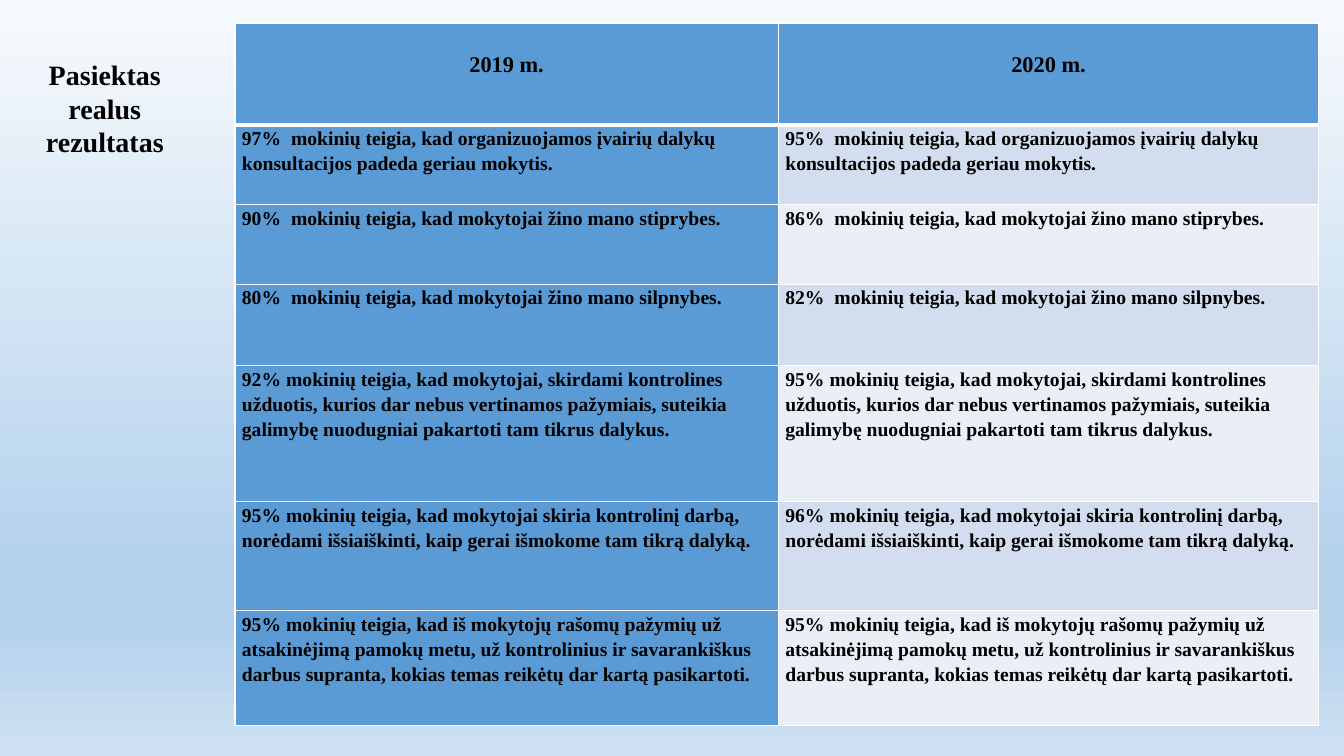
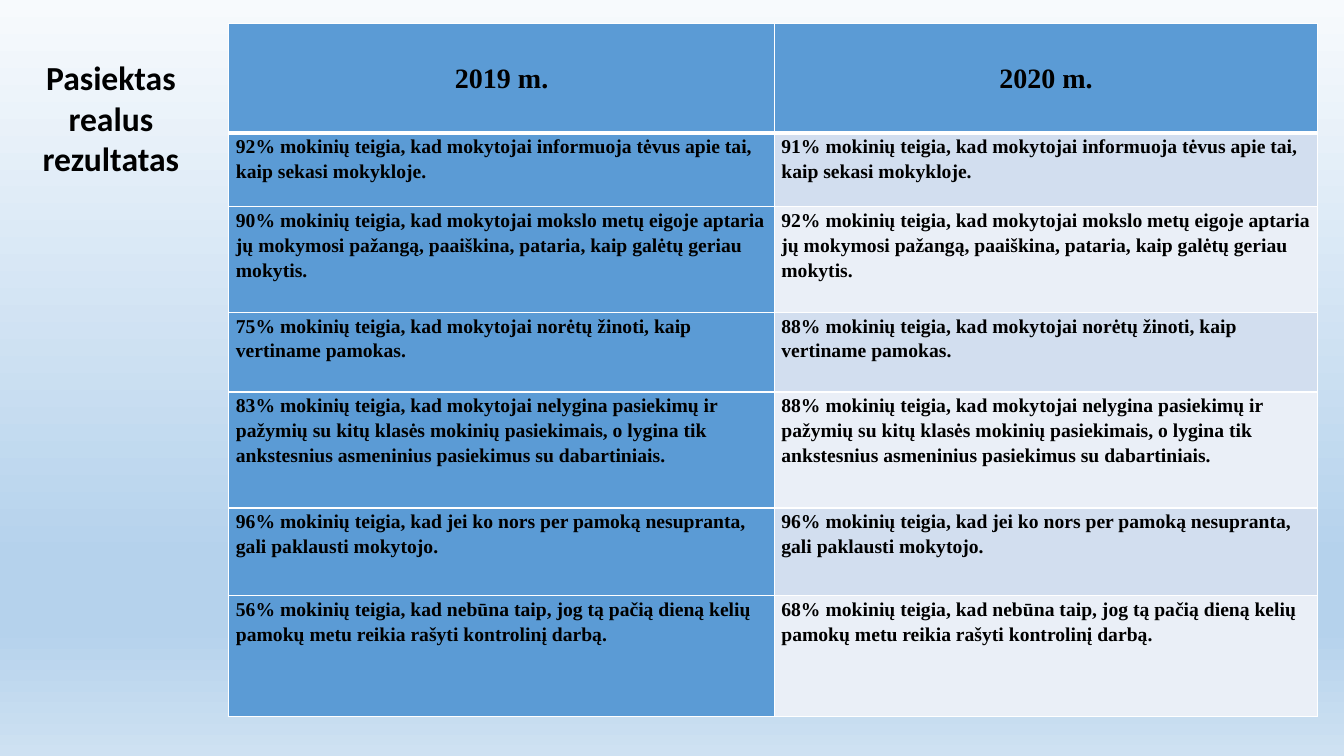
from dataclasses import dataclass
from pptx import Presentation
from pptx.dml.color import RGBColor
from pptx.enum.text import PP_ALIGN
from pptx.oxml import parse_xml
from pptx.oxml.ns import nsdecls, qn
from pptx.util import Inches, Pt


@dataclass(frozen=True)
class Theme:
    ink: str = "000000"
    line: str = "FFFFFF"
    main: str = "5B9BD5"
    bands: tuple = ("D2DEEF", "EAEFF7")
    sky: tuple = ((0, "F7FAFD"), (74, "B5D2EC"), (83, "B5D2EC"), (100, "CEE1F2"))
    serif: str = "Times New Roman"
    sans: str = "Calibri"
    body: int = 14
    lead: float = 1.15
    thin: int = 1
    thick: int = 3


THEME = Theme()
TITLE = "Pasiektas realus rezultatas"
YEARS = ("2019 m.", "2020 m.")

FIRST = (
    (0.79, 97, 95, " mokinių teigia, kad organizuojamos įvairių dalykų konsultacijos padeda geriau mokytis."),
    (0.79, 90, 86, " mokinių teigia, kad mokytojai žino mano stiprybes."),
    (0.81, 80, 82, " mokinių teigia, kad mokytojai žino mano silpnybes."),
    (1.35, 92, 95, "mokinių teigia, kad mokytojai, skirdami kontrolines užduotis, kurios dar nebus "
     "vertinamos pažymiais, suteikia galimybę nuodugniai pakartoti tam tikrus dalykus."),
    (1.08, 95, 96, "mokinių teigia, kad mokytojai skiria kontrolinį darbą, norėdami išsiaiškinti, "
     "kaip gerai išmokome tam tikrą dalyką."),
    (1.14, 95, 95, "mokinių teigia, kad iš mokytojų rašomų pažymių už atsakinėjimą pamokų metu, "
     "už kontrolinius ir savarankiškus darbus supranta, kokias temas reikėtų dar kartą pasikartoti."),
)

SECOND = (
    (0.73, 92, 91, "mokinių teigia, kad mokytojai informuoja tėvus apie tai, kaip sekasi mokykloje."),
    (1.05, 90, 92, "mokinių teigia, kad mokytojai mokslo metų eigoje aptaria jų mokymosi pažangą, "
     "paaiškina, pataria, kaip galėtų geriau mokytis."),
    (0.79, 75, 88, "mokinių teigia, kad mokytojai norėtų žinoti, kaip vertiname pamokas."),
    (1.15, 83, 88, "mokinių teigia, kad mokytojai nelygina pasiekimų ir pažymių su kitų klasės mokinių "
     "pasiekimais, o lygina tik ankstesnius asmeninius pasiekimus su dabartiniais."),
    (0.87, 96, 96, "mokinių teigia, kad jei ko nors per pamoką nesupranta, gali paklausti mokytojo."),
    (1.2, 56, 68, "mokinių teigia, kad nebūna taip, jog tą pačią dieną kelių pamokų metu reikia "
     "rašyti kontrolinį darbą."),
)


def paint_sky(master):
    fill = master.background.fill
    fill.gradient()
    fill.gradient_angle = 270
    stops = next(master.element.iter(qn("a:gsLst")))
    for stop in list(stops):
        stops.remove(stop)
    for spot, tint in THEME.sky:
        stops.append(parse_xml(
            f'<a:gs {nsdecls("a")} pos="{spot * 1000}"><a:srgbClr val="{tint}"/></a:gs>'))


def style_text(para, size, face, align=PP_ALIGN.LEFT):
    para.alignment = align
    for run in para.runs:
        font = run.font
        font.size, font.name, font.bold = Pt(size), face, True
        font.color.rgb = RGBColor.from_string(THEME.ink)


def add_title(slide, box, size, face):
    frame = slide.shapes.add_textbox(*map(Inches, box)).text_frame
    frame.word_wrap = True
    frame.text = TITLE
    para = frame.paragraphs[0]
    para.space_before = Pt(53)
    style_text(para, size, face, PP_ALIGN.CENTER)


def edge_cell(cell, top, base):
    props = cell._tc.get_or_add_tcPr()
    edges = (("L", THEME.thin), ("R", THEME.thin), ("T", top), ("B", base))
    for side, width in edges:
        props.append(parse_xml(
            f'<a:ln{side} {nsdecls("a")} w="{Pt(width)}"><a:solidFill>'
            f'<a:srgbClr val="{THEME.line}"/></a:solidFill></a:ln{side}>'))


def fill_cell(cell, text, row, col, size, drop):
    head = row == 0
    edge_cell(cell, THEME.thick if row == 1 else THEME.thin,
              THEME.thick if head else THEME.thin)
    tint = THEME.main if head or col == 0 else THEME.bands[(row - 1) % 2]
    cell.fill.solid()
    cell.fill.fore_color.rgb = RGBColor.from_string(tint)
    cell.margin_left = cell.margin_right = Inches(0.07)
    cell.margin_top = Inches(drop if head else 0)
    cell.margin_bottom = 0
    cell.text_frame.text = text
    para = cell.text_frame.paragraphs[0]
    para.line_spacing = THEME.lead
    style_text(para, size if head else THEME.body, THEME.serif,
               PP_ALIGN.CENTER if head else PP_ALIGN.LEFT)


def add_survey(slide, left, top, widths, high, size, drop, facts):
    rows = [(high, *YEARS)]
    rows += [(tall, f"{old}% {claim}", f"{new}% {claim}") for tall, old, new, claim in facts]
    total = sum(row[0] for row in rows)
    box = map(Inches, (left, top, sum(widths), total))
    table = slide.shapes.add_table(len(rows), len(widths), *box).table
    for col, width in enumerate(widths):
        table.columns[col].width = Inches(width)
    for row, (tall, *texts) in enumerate(rows):
        table.rows[row].height = Inches(tall)
        for col, text in enumerate(texts):
            fill_cell(table.cell(row, col), text, row, col, size, drop)


def main():
    deck = Presentation()
    deck.slide_width, deck.slide_height = Inches(13.33), Inches(7.5)
    paint_sky(deck.slide_master)
    blank = deck.slide_layouts[6]

    slide = deck.slides.add_slide(blank)
    add_title(slide, (0, 0.52, 2.08, 2.68), 20, THEME.serif)
    add_survey(slide, 2.33, 0.23, (5.39, 5.36), 1.01, 16, 0.25, FIRST)

    slide = deck.slides.add_slide(blank)
    add_title(slide, (0.3, 0.52, 1.6, 2.79), 24, THEME.sans)
    add_survey(slide, 2.27, 0.23, (5.41, 5.39), 1.09, 20, 0.35, SECOND)

    deck.save("out.pptx")


if __name__ == "__main__":
    main()
